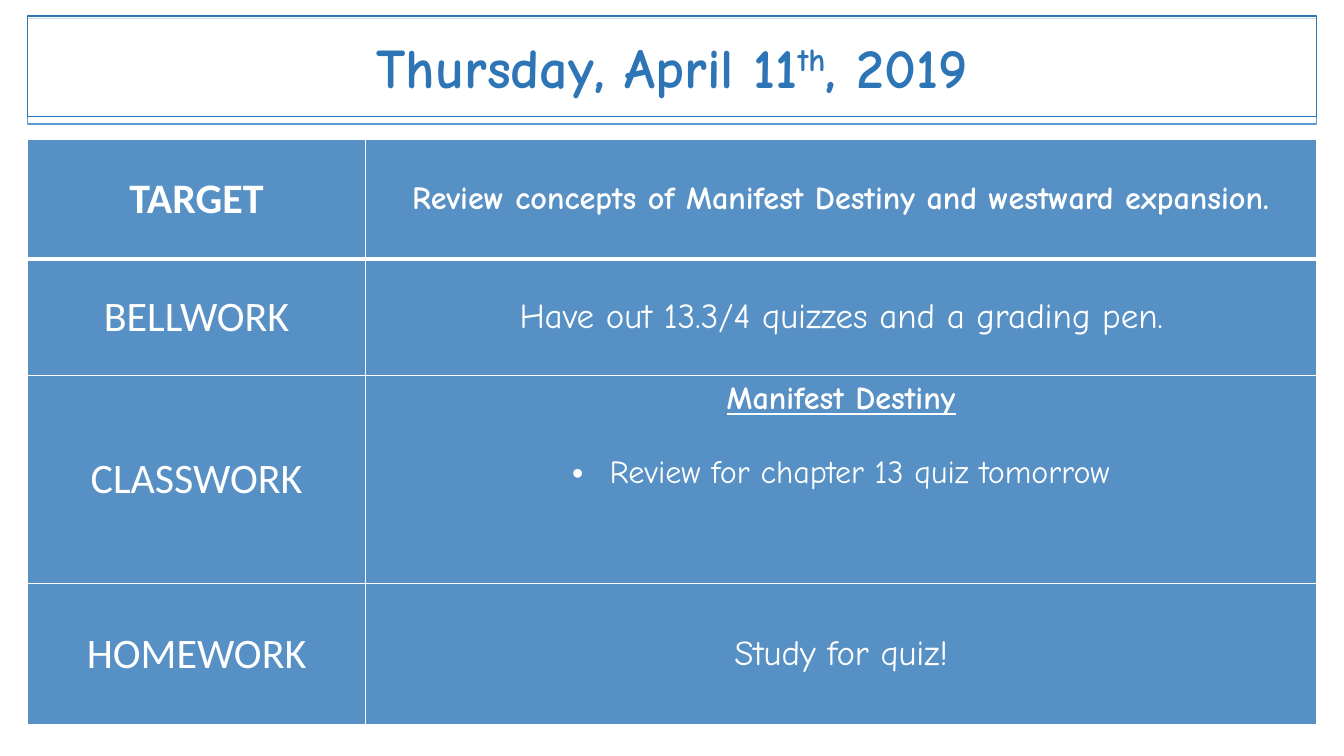
from lxml import etree
from pptx import Presentation
from pptx.dml.color import RGBColor
from pptx.enum.shapes import MSO_SHAPE
from pptx.enum.text import MSO_ANCHOR, MSO_AUTO_SIZE, PP_ALIGN
from pptx.oxml.ns import qn
from pptx.util import Cm, Pt

RECTANGLE = MSO_SHAPE.RECTANGLE
MIDDLE, TOP = MSO_ANCHOR.MIDDLE, MSO_ANCHOR.TOP
NO_AUTOFIT = MSO_AUTO_SIZE.NONE
CENTER = PP_ALIGN.CENTER
TITLE_ONLY = 5

COLORS = {"blue": "2E75B6", "light_blue": "5B9BD5", "white": "FFFFFF"}
LABEL_FONT, BODY_FONT = "Calibri", "Comic Neue"

DATE_RUNS = [("Thursday, April 11", 0), ("th", 30), (", 2019", 0)]
AGENDA = [
    # label, row height in cm, vertical anchor, lines of (text, format)
    ("TARGET", 3.0, MIDDLE, [
        ("Review concepts of Manifest Destiny and westward expansion.",
         {"size": 23, "bold": True})]),
    ("BELLWORK", 2.95, MIDDLE, [
        ("Have out 13.3/4 quizzes and a grading pen.", {"size": 25})]),
    ("CLASSWORK", 5.23, TOP, [
        ("Manifest Destiny", {"size": 23, "bold": True, "underline": True}),
        ("Review for chapter 13 quiz tomorrow",
         {"size": 23, "bullet": True, "space_before": 26.4})]),
    ("HOMEWORK", 3.56, MIDDLE, [("Study for quiz!", {"size": 25})]),
]

LEFT, WIDTH = 0.69, 32.49
LABEL_WIDTH = 8.53
TABLE_TOP = 3.52


def rgb(name):
    return RGBColor.from_string(COLORS[name])


def add_text(paragraph, text, size, font=BODY_FONT, color="white", bold=False,
             underline=False, baseline=0, bullet=False, space_before=0):
    paragraph.alignment = CENTER
    paragraph.space_before = Pt(space_before)
    if bullet:
        properties = paragraph._p.get_or_add_pPr()
        properties.set("marL", str(Cm(0.95)))
        properties.set("indent", str(Cm(-0.95)))
        etree.SubElement(properties, qn("a:buFont"), typeface="Arial")
        etree.SubElement(properties, qn("a:buChar"), char="•")
    run = paragraph.add_run()
    run.text = text
    run.font.name = font
    run.font.size = Pt(size)
    run.font.bold = bold
    run.font.underline = underline
    run.font.color.rgb = rgb(color)
    if baseline:
        run._r.get_or_add_rPr().set("baseline", str(baseline * 1000))


def set_fill(fill, color, parent, opacity=100):
    """Fill with a colour; parent is the XML element that holds the fill."""
    fill.solid()
    fill.fore_color.rgb = rgb(color)
    if opacity < 100:
        color_element = parent.find(qn("a:solidFill")).find(qn("a:srgbClr"))
        etree.SubElement(color_element, qn("a:alpha"), val=str(opacity * 1000))


def style_box(shape, top, height, line, opacity=100):
    shape.left, shape.top = Cm(LEFT), Cm(top)
    shape.width, shape.height = Cm(WIDTH), Cm(height)
    set_fill(shape.fill, "white", shape._element.spPr, opacity)
    shape.line.color.rgb = rgb(line)
    shape.line.width = Pt(1)


def set_borders(cell, top, bottom):
    properties = cell._tc.get_or_add_tcPr()
    widths = {"a:lnL": 1, "a:lnR": 1, "a:lnT": top, "a:lnB": bottom}
    for position, (tag, width) in enumerate(widths.items()):
        border = etree.Element(qn(tag), w=str(Pt(width)))
        fill = etree.SubElement(border, qn("a:solidFill"))
        etree.SubElement(fill, qn("a:srgbClr"), val=COLORS["white"])
        properties.insert(position, border)


def fill_cell(cell, row, anchor, lines):
    cell.vertical_anchor = anchor
    set_fill(cell.fill, "blue", cell._tc.get_or_add_tcPr(), 80)
    set_borders(cell, top=3 if row == 1 else 1, bottom=3 if row == 0 else 1)
    for index, (text, style) in enumerate(lines):
        frame = cell.text_frame
        paragraph = frame.add_paragraph() if index else frame.paragraphs[0]
        add_text(paragraph, text, **style)


def add_agenda(slide):
    height = sum(row_height for _, row_height, _, _ in AGENDA)
    table = slide.shapes.add_table(len(AGENDA), 2, Cm(LEFT), Cm(TABLE_TOP),
                                   Cm(WIDTH), Cm(height)).table
    table.first_row = table.horz_banding = False
    table.columns[0].width = Cm(LABEL_WIDTH)
    table.columns[1].width = Cm(WIDTH - LABEL_WIDTH)
    for row, (label, row_height, anchor, lines) in enumerate(AGENDA):
        table.rows[row].height = Cm(row_height)
        label_style = {"size": 30, "font": LABEL_FONT, "bold": row == 0}
        fill_cell(table.cell(row, 0), row, MIDDLE, [(label, label_style)])
        fill_cell(table.cell(row, 1), row, anchor, lines)


def add_date(slide):
    title = slide.shapes.title
    style_box(title, top=0.4, height=2.54, line="blue", opacity=65)
    title.text_frame.auto_size = NO_AUTOFIT
    title.text_frame.vertical_anchor = MIDDLE
    for text, baseline in DATE_RUNS:
        add_text(title.text_frame.paragraphs[0], text, 40, color="blue",
                 bold=True, baseline=baseline)
    # The title lies in front of its backing panel
    title._element.getparent().append(title._element)


def main():
    presentation = Presentation()
    presentation.slide_width, presentation.slide_height = Cm(33.87), Cm(19.05)
    slide = presentation.slides.add_slide(presentation.slide_layouts[TITLE_ONLY])
    panel = slide.shapes.add_shape(RECTANGLE, 0, 0, 0, 0)
    panel.shadow.inherit = False
    style_box(panel, top=0.46, height=2.67, line="light_blue")
    add_agenda(slide)
    add_date(slide)
    presentation.save("out.pptx")


if __name__ == "__main__":
    main()
